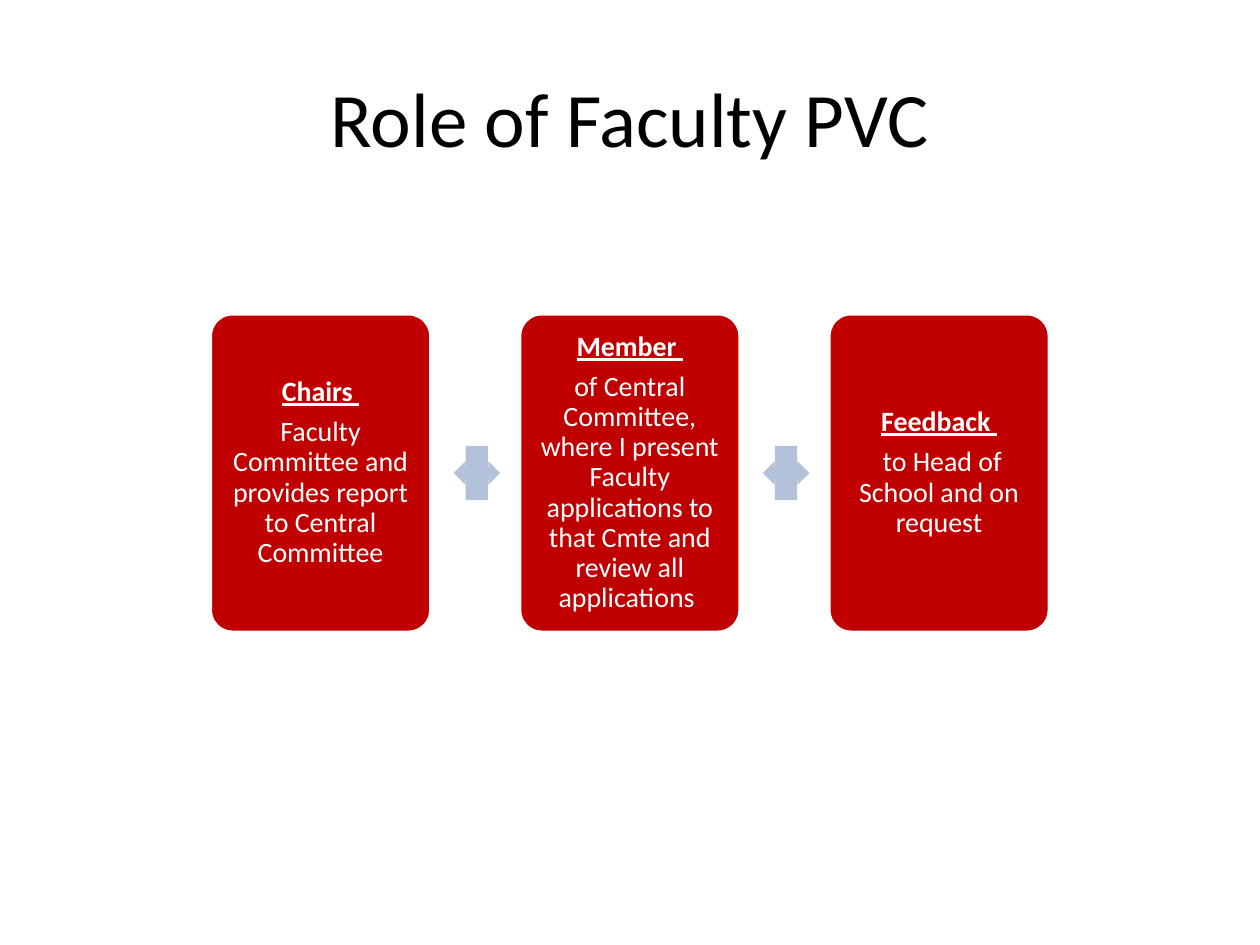
"""Build the slide on the role of the Faculty PVC."""
import pptx
import pptx.dml.color
import pptx.enum.shapes
import pptx.enum.text
import pptx.util

Pt = pptx.util.Pt
RGBColor = pptx.dml.color.RGBColor
SHAPE = pptx.enum.shapes.MSO_SHAPE

BLACK = RGBColor(0x00, 0x00, 0x00)
WHITE = RGBColor(0xFF, 0xFF, 0xFF)
RED = RGBColor(0xC0, 0x00, 0x00)
PALE_BLUE = RGBColor(0xB3, 0xC1, 0xDB)

FONT = "Calibri"
CARD_LEFT, CARD_TOP = 120.2, 179.3
CARD_WIDTH, CARD_HEIGHT = 126, 182
CARD_PITCH = 176.7
ARROW_WIDTH, ARROW_HEIGHT = 26.6, 31
ARROW_OFFSET = 139
ROLES = [
    ("Chairs ", "Faculty Committee and provides report to Central Committee"),
    ("Member ", "of Central Committee, where I present Faculty applications "
                "to that Cmte and review all applications "),
    ("Feedback ", " to Head of School and on request"),
]


def write_text(para, text, size=16, color=WHITE, emphasis=False, spacing=None, after=None):
    para.alignment = pptx.enum.text.PP_ALIGN.CENTER
    para.line_spacing = spacing
    para.space_after = after
    span = para.add_run()
    span.text = text
    span.font.name = FONT
    span.font.size = Pt(size)
    span.font.color.rgb = color
    span.font.bold = emphasis
    span.font.underline = emphasis


def prepare_frame(box):
    frame = box.text_frame
    frame.word_wrap = True
    frame.vertical_anchor = pptx.enum.text.MSO_ANCHOR.MIDDLE
    return frame


def add_title(page, text):
    box = page.shapes.add_textbox(Pt(36), Pt(21.6), Pt(648), Pt(90))
    write_text(prepare_frame(box).paragraphs[0], text, size=44, color=BLACK)


def add_filled_shape(page, kind, left, top, width, height, color):
    shape = page.shapes.add_shape(kind, Pt(left), Pt(top), Pt(width), Pt(height))
    shape.shadow.inherit = False
    shape.fill.solid()
    shape.fill.fore_color.rgb = color
    shape.line.fill.background()
    return shape


def add_card(page, left, heading, body):
    card = add_filled_shape(page, SHAPE.ROUNDED_RECTANGLE, left, CARD_TOP,
                            CARD_WIDTH, CARD_HEIGHT, RED)
    card.adjustments[0] = 0.1
    card.line.color.rgb = WHITE
    card.line.width = Pt(2)
    frame = prepare_frame(card)
    frame.margin_left = frame.margin_right = Pt(5)
    frame.margin_top = frame.margin_bottom = Pt(5)
    write_text(frame.paragraphs[0], heading, emphasis=True, spacing=0.9, after=Pt(5.6))
    write_text(frame.add_paragraph(), body, spacing=0.9, after=Pt(5.6))


def add_arrow(page, left):
    top = CARD_TOP + (CARD_HEIGHT - ARROW_HEIGHT) / 2
    add_filled_shape(page, SHAPE.LEFT_RIGHT_ARROW_CALLOUT, left, top,
                     ARROW_WIDTH, ARROW_HEIGHT, PALE_BLUE)


def main():
    deck = pptx.Presentation()
    deck.slide_width, deck.slide_height = Pt(720), Pt(540)
    page = deck.slides.add_slide(deck.slide_layouts[6])
    add_title(page, "Role of Faculty PVC")
    for index, (heading, body) in enumerate(ROLES):
        left = CARD_LEFT + index * CARD_PITCH
        add_card(page, left, heading, body)
        if index < len(ROLES) - 1:
            add_arrow(page, left + ARROW_OFFSET)
    deck.save("out.pptx")


if __name__ == "__main__":
    main()
